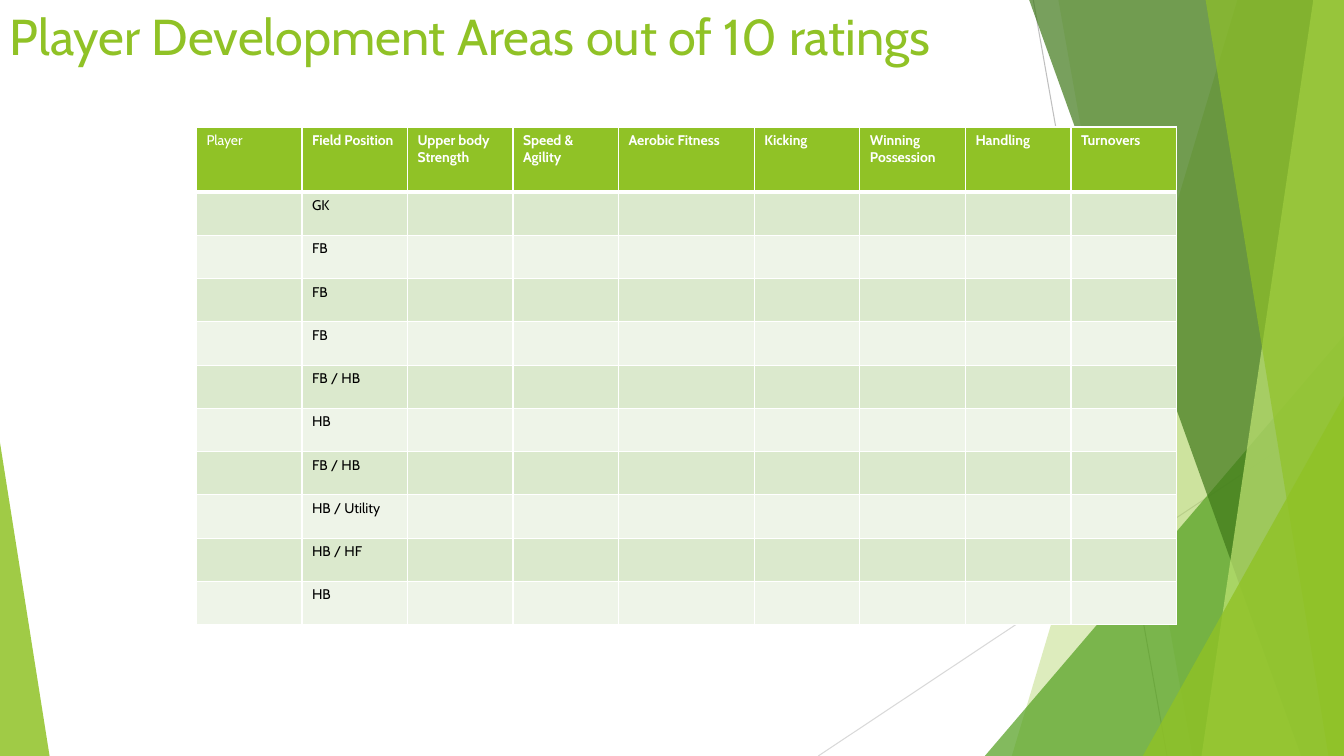
from lxml.etree import SubElement as Sub
from pptx import Presentation
from pptx.dml.color import RGBColor
from pptx.enum.shapes import MSO_CONNECTOR as Link, MSO_SHAPE as Form
from pptx.oxml.ns import qn
from pptx.util import Cm, Pt

WIDE, HIGH, TOP = 33.87, 19.05, -0.02
GREEN, WHITE, BLACK = "90C226", "FFFFFF", "000000"
BANDS = "EEF4E8", "DBE9CD"
HEADS = ["Player", "Field Position", "Upper body Strength", "Speed & Agility",
         "Aerobic Fitness", "Kicking", "Winning Possession", "Handling", "Turnovers"]
ROLES = ["GK", "FB", "FB", "FB", "FB / HB", "HB", "FB / HB", "HB / Utility",
         "HB / HF", "HB"]


def tint(code):
    return RGBColor.from_string(code)


def write(frame, text, font="Cabin", size=10, color=BLACK, bold=False):
    run = frame.paragraphs[0].add_run()
    run.text = text
    run.font.name = font
    run.font.size = Pt(size)
    run.font.bold = bold
    run.font.color.rgb = tint(color)


class Deck:
    """Draws styled elements on the current slide."""

    def __init__(self, slide, font="Cabin"):
        self.shapes = slide.shapes
        self.font = font

    def line(self, start, end, color):
        link = self.shapes.add_connector(
            Link.STRAIGHT, *map(Cm, start), *map(Cm, end))
        link.line.color.rgb = tint(color)
        link.line.width = Pt(0.75)
        Sub(link.element.spPr, qn("a:effectLst"))

    def paint(self, shape, color, alpha):
        shape.shadow.inherit = False
        shape.fill.solid()
        shape.fill.fore_color.rgb = tint(color)
        shape.line.fill.background()
        hue = shape.element.spPr.find(".//" + qn("a:srgbClr"))
        Sub(hue, qn("a:alpha"), val=str(alpha * 1000))

    def shard(self, top, foot, color, alpha):
        path = self.shapes.build_freeform(Cm(top), Cm(TOP))
        path.add_line_segments([(Cm(x), Cm(y)) for x, y in
                                ((WIDE, TOP), (WIDE, HIGH), (foot, HIGH))])
        self.paint(path.convert_to_shape(), color, alpha)

    def wedge(self, left, top, width, tip, color, alpha):
        shape = self.shapes.add_shape(
            Form.ISOSCELES_TRIANGLE, *map(Cm, (left, top, width, HIGH - top)))
        shape.adjustments[0] = tip
        self.paint(shape, color, alpha)

    def title(self, text, box):
        frame = self.shapes.add_textbox(*map(Cm, box)).text_frame
        frame.word_wrap = True
        write(frame, text, font=self.font, size=36, color=GREEN)

    def cell(self, cell, text, fill, base=1, **style):
        props = cell._tc.get_or_add_tcPr()
        for side, width in zip("LRTB", (1, 1, 1, base)):
            edge = Sub(props, qn("a:ln" + side), w=str(Pt(width)))
            Sub(Sub(edge, qn("a:solidFill")), qn("a:srgbClr"), val=WHITE)
        cell.fill.solid()
        cell.fill.fore_color.rgb = tint(fill)
        if text:
            write(cell.text_frame, text, font=self.font, **style)

    def table(self, heads, roles, left, top, widths, heights):
        grid = self.shapes.add_table(
            len(heights), len(widths),
            *map(Cm, (left, top, sum(widths), sum(heights)))).table
        for col, width in zip(grid.columns, widths):
            col.width = Cm(width)
        for row, height in zip(grid.rows, heights):
            row.height = Cm(height)
        for c, head in enumerate(heads):
            self.cell(grid.cell(0, c), head, GREEN, base=3, color=WHITE, bold=c > 0)
            for r, role in enumerate(roles, 1):
                self.cell(grid.cell(r, c), role if c == 1 else "", BANDS[r % 2])


def main():
    show = Presentation()
    show.slide_width, show.slide_height = Cm(WIDE), Cm(HIGH)
    deck = Deck(show.slides.add_slide(show.slide_layouts[6]))

    deck.line((26.04, 0), (29.41, HIGH), "BFBFBF")
    deck.line((WIDE, 10.24), (20.62, HIGH), "D9D9D9")
    deck.shard(31.19, 25.5, GREEN, 30)
    deck.shard(26.67, 30.05, GREEN, 20)
    deck.wedge(24.82, 8.46, 9.05, 1, "54A021", 72)
    deck.shard(25.93, 32.79, "3F7819", 70)
    deck.shard(33.1, 30.28, "C0E474", 70)
    deck.shard(30.38, 33.48, GREEN, 65)
    deck.wedge(28.8, 9.98, 5.07, 1, GREEN, 80)
    deck.wedge(0, 11.15, 1.25, 0, GREEN, 85)

    deck.title("Player Development Areas out of 10 ratings", (0, 0, 23.88, 3.66))
    widths = [3.42 if head == "Aerobic Fitness" else 2.66 for head in HEADS]
    deck.table(HEADS, ROLES, 4.95, 3.2, widths, [1.64] + [1.09] * len(ROLES))
    show.save("out.pptx")


if __name__ == "__main__":
    main()
